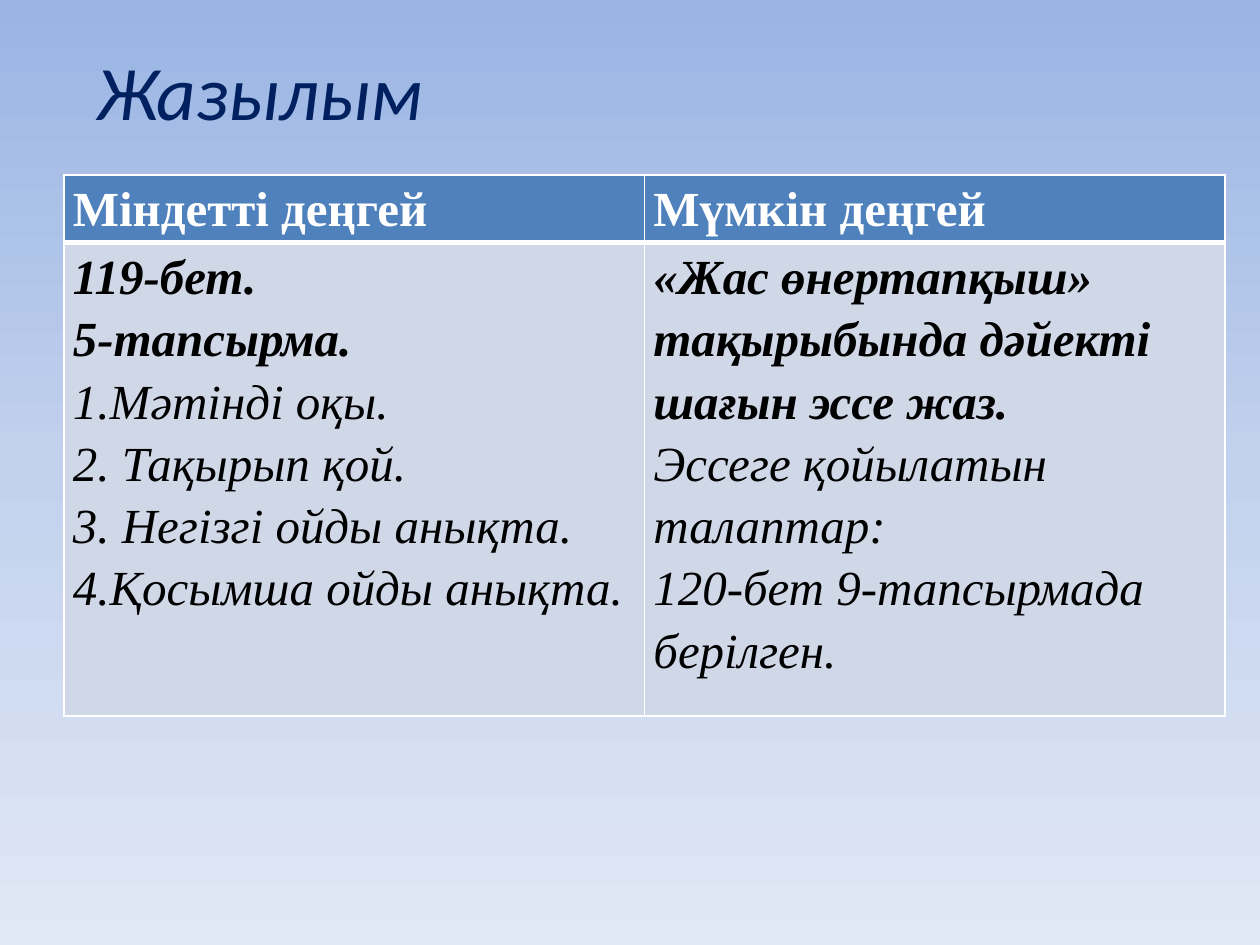
from copy import deepcopy
from dataclasses import dataclass

from pptx import Presentation
from pptx.dml.color import RGBColor as Rgb
from pptx.enum.text import MSO_AUTO_SIZE as AutoSize
from pptx.oxml.ns import qn
from pptx.oxml.xmlchemy import OxmlElement as Element
from pptx.util import Pt

PX = 914400 // 126
COLORS = {
    "navy": "002060", "white": "FFFFFF", "black": "000000",
    "header": "4F81BD", "body": "D0D8E8",
    "sky_top": "9AB5E4", "sky_middle": "C2D1ED", "sky_bottom": "E1E8F5",
}
SKY = [(0, "sky_top"), (0.5, "sky_middle"), (1, "sky_bottom")]


@dataclass
class Style:
    color: str
    bold: bool = False
    italic: bool = False
    font: str = "Times New Roman"
    size: int = 28


@dataclass
class Line:
    text: str
    style: Style


@dataclass
class Row:
    fill: str
    height: int
    borders: dict[str, int]
    cells: list[list[Line]]


TITLE = Style("navy", italic=True, font="Calibri", size=44)
HEADING = Style("white", bold=True)
TASK = Style("black", bold=True, italic=True)
STEP = Style("black", italic=True)

ROWS = [
    Row("header", 67, {"L": 1, "R": 1, "T": 1, "B": 3}, [
        [Line("Міндетті деңгей", HEADING)],
        [Line("Мүмкін деңгей", HEADING)],
    ]),
    Row("body", 473, {"L": 1, "R": 1, "T": 3, "B": 1}, [
        [
            Line("119-бет.", TASK),
            Line("5-тапсырма.", TASK),
            Line("1.Мәтінді оқы.", STEP),
            Line("2. Тақырып қой.", STEP),
            Line("3. Негізгі ойды анықта.", STEP),
            Line("4.Қосымша ойды анықта.", STEP),
        ],
        [
            Line("«Жас өнертапқыш» тақырыбында дәйекті шағын эссе жаз.", TASK),
            Line("Эссеге қойылатын талаптар:", STEP),
            Line("120-бет 9-тапсырмада берілген.", STEP),
        ],
    ]),
]


def rgb(name: str) -> Rgb:
    return Rgb.from_string(COLORS[name])


def set_all(target, values: dict) -> None:
    for name, value in values.items():
        setattr(target, name, value)


def write_lines(frame, lines: list[Line], spacing: float) -> None:
    for index, line in enumerate(lines):
        para = frame.paragraphs[0] if index == 0 else frame.add_paragraph()
        para.line_spacing = spacing
        span = para.add_run()
        span.text = line.text
        style = line.style
        set_all(span.font, {"name": style.font, "size": Pt(style.size),
                            "bold": style.bold, "italic": style.italic})
        span.font.color.rgb = rgb(style.color)


def paint_background(page) -> None:
    fill = page.background.fill
    fill.gradient()
    fill.gradient_angle = 270
    # A new gradient has two stops; the third is cloned from the first
    stops = page.element.find(".//" + qn("a:gsLst"))
    stops.append(deepcopy(stops[0]))
    for stop, (position, color) in zip(fill.gradient_stops, SKY):
        stop.position = position
        stop.color.rgb = rgb(color)


def add_borders(cell, borders: dict[str, int]) -> None:
    properties = cell._tc.get_or_add_tcPr()
    for side, width in borders.items():
        border = Element(f"a:ln{side}")
        border.set("w", str(Pt(width)))
        solid = Element("a:solidFill")
        color = Element("a:srgbClr")
        color.set("val", COLORS["white"])
        solid.append(color)
        border.append(solid)
        properties.append(border)


def add_title(page) -> None:
    box = page.shapes.add_textbox(84 * PX, 37 * PX, 355 * PX, 106 * PX)
    set_all(box.text_frame, {"word_wrap": False,
                             "auto_size": AutoSize.SHAPE_TO_FIT_TEXT})
    write_lines(box.text_frame, [Line("Жазылым", TITLE)], 1.0)


def add_level_table(page, left: int, top: int, width: int) -> None:
    height = sum(row.height for row in ROWS)
    table = page.shapes.add_table(len(ROWS), len(ROWS[0].cells), left * PX,
                                  top * PX, width * PX, height * PX).table
    table.horz_banding = False
    for row_index, row in enumerate(ROWS):
        table.rows[row_index].height = row.height * PX
        for column, lines in enumerate(row.cells):
            cell = table.cell(row_index, column)
            set_all(cell, {"margin_left": 9 * PX, "margin_right": 9 * PX,
                           "margin_top": 0, "margin_bottom": 0})
            add_borders(cell, row.borders)
            cell.fill.solid()
            cell.fill.fore_color.rgb = rgb(row.fill)
            write_lines(cell.text_frame, lines, 1.15)


def main() -> None:
    deck = Presentation()
    set_all(deck, {"slide_width": 1260 * PX, "slide_height": 945 * PX})
    page = deck.slides.add_slide(deck.slide_layouts[6])
    paint_background(page)
    add_title(page)
    add_level_table(page, 64, 175, 1161)
    deck.save("out.pptx")


if __name__ == "__main__":
    main()
